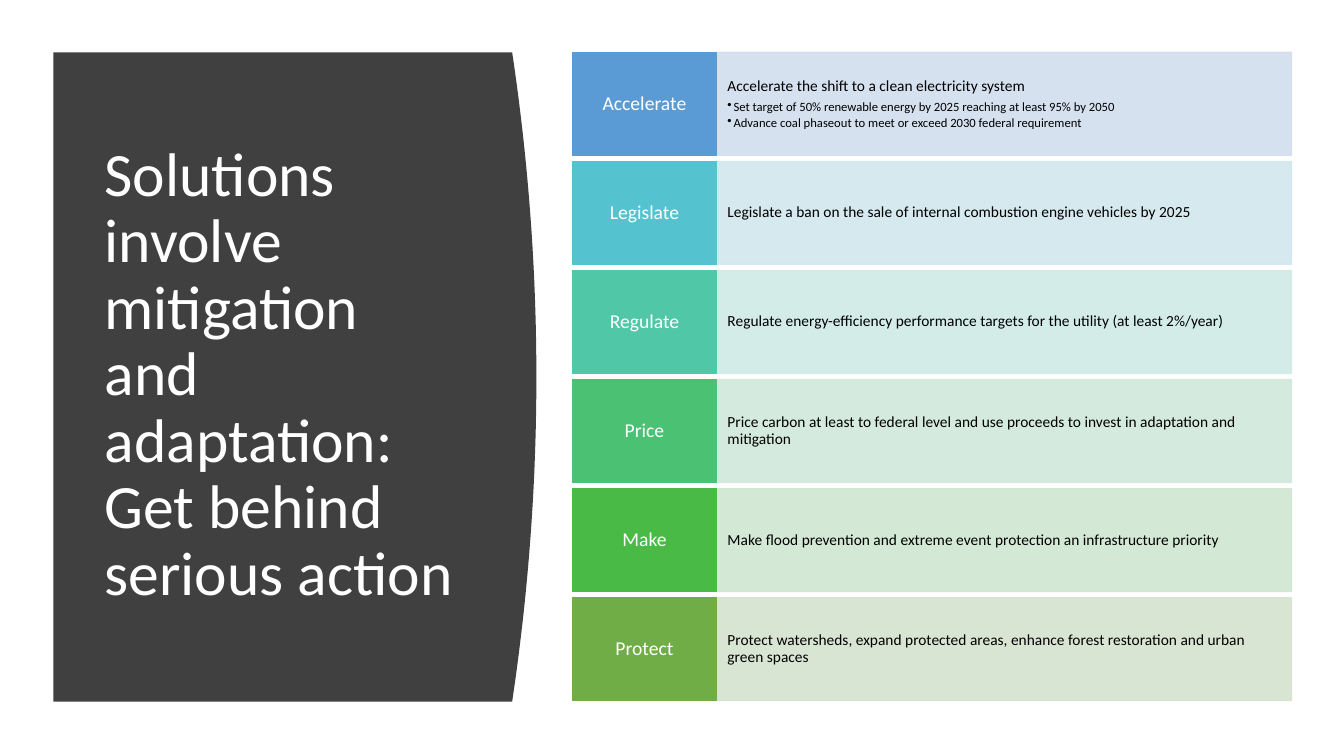
from lxml.etree import SubElement
from pptx import Presentation
from pptx.dml.color import RGBColor
from pptx.enum.shapes import MSO_SHAPE
from pptx.enum.text import MSO_ANCHOR, PP_ALIGN
from pptx.oxml.ns import qn
from pptx.util import Inches, Pt

WHITE = RGBColor(0xFF, 0xFF, 0xFF)
BLACK = RGBColor(0x00, 0x00, 0x00)
CHARCOAL = RGBColor(0x40, 0x40, 0x40)
BLUE, PALE_BLUE = RGBColor(0x5B, 0x9B, 0xD5), RGBColor(0xD2, 0xDE, 0xEF)
CYAN, PALE_CYAN = RGBColor(0x55, 0xC3, 0xCF), RGBColor(0xD1, 0xE7, 0xED)
TEAL, PALE_TEAL = RGBColor(0x50, 0xC8, 0xA7), RGBColor(0xD0, 0xEB, 0xE6)
MINT, PALE_MINT = RGBColor(0x4B, 0xC1, 0x74), RGBColor(0xD0, 0xE8, 0xDB)
GREEN, PALE_GREEN = RGBColor(0x4A, 0xBA, 0x46), RGBColor(0xCF, 0xE6, 0xD1)
OLIVE, PALE_OLIVE = RGBColor(0x70, 0xAD, 0x47), RGBColor(0xD5, 0xE3, 0xCF)

TITLE = "Solutions involve mitigation and adaptation: Get behind serious action"
ACTIONS = [
    ("Accelerate", BLUE, PALE_BLUE, "Accelerate the shift to a clean electricity system",
     ["Set target of 50% renewable energy by 2025 reaching at least 95% by 2050",
      "Advance coal phaseout to meet or exceed 2030 federal requirement"]),
    ("Legislate", CYAN, PALE_CYAN,
     "Legislate a ban on the sale of internal combustion engine vehicles by 2025", []),
    ("Regulate", TEAL, PALE_TEAL,
     "Regulate energy-efficiency performance targets for the utility (at least 2%/year)", []),
    ("Price", MINT, PALE_MINT,
     "Price carbon at least to federal level and use proceeds to invest in adaptation and mitigation", []),
    ("Make", GREEN, PALE_GREEN,
     "Make flood prevention and extreme event protection an infrastructure priority", []),
    ("Protect", OLIVE, PALE_OLIVE,
     "Protect watersheds, expand protected areas, enhance forest restoration and urban green spaces", []),
]


def set_frame(frame, anchor=MSO_ANCHOR.MIDDLE, side=0.1, end=0.05):
    """Set wrapping, anchor and margins of a text frame."""
    frame.word_wrap = True
    frame.vertical_anchor = anchor
    frame.margin_left = frame.margin_right = Inches(side)
    frame.margin_top = frame.margin_bottom = Inches(end)


def write(para, text, size=11, color=BLACK, align=PP_ALIGN.LEFT, after=0, bullet=False):
    """Write one formatted paragraph."""
    para.alignment = align
    para.line_spacing = 0.9
    para.space_after = Pt(after)
    if bullet:
        properties = para._p.get_or_add_pPr()
        properties.set("marL", str(Inches(0.06)))
        properties.set("indent", str(-Inches(0.06)))
        SubElement(properties, qn("a:buChar")).set("char", "•")
    span = para.add_run()
    span.text = text
    span.font.name = "Calibri"
    span.font.size = Pt(size)
    span.font.color.rgb = color


def add_panel(page, left, top, width, height, bulge=0.24, steps=40):
    """Draw the dark title panel with its curved right edge."""
    edge = []
    for step in range(steps + 1):
        offset = 2 * step / steps - 1
        edge.append((Inches(left + width - bulge * offset ** 2),
                     Inches(top + height * step / steps)))
    builder = page.shapes.build_freeform(Inches(left), Inches(top))
    builder.add_line_segments(edge + [(Inches(left), Inches(top + height))], close=True)
    panel = builder.convert_to_shape()
    panel.shadow.inherit = False
    panel.fill.solid()
    panel.fill.fore_color.rgb = CHARCOAL
    panel.line.fill.background()

    title = page.shapes.add_textbox(Inches(left + 0.41), Inches(top + 0.59),
                                    Inches(3.74), Inches(5.24))
    set_frame(title.text_frame)
    write(title.text_frame.paragraphs[0], TITLE, size=44, color=WHITE)


def add_block(page, left, top, width, height, color, opacity=100):
    """Draw one filled rectangle with a line of the same colour."""
    block = page.shapes.add_shape(MSO_SHAPE.RECTANGLE, Inches(left), Inches(top),
                                  Inches(width), Inches(height))
    block.shadow.inherit = False
    block.fill.solid()
    block.fill.fore_color.rgb = color
    block.line.color.rgb = color
    block.line.width = Pt(1)
    if opacity < 100:
        for shade in block._element.spPr.iter(qn("a:srgbClr")):
            SubElement(shade, qn("a:alpha")).set("val", str(opacity * 1000))
    return block


def add_action(page, left, top, width, height, action):
    """Draw one row: a verb block and its description bar."""
    verb, color, pale, description, details = action
    verb_width = width / 5

    bar = add_block(page, left + verb_width, top, width - verb_width, height, pale, opacity=90)
    anchor = MSO_ANCHOR.TOP if details else MSO_ANCHOR.MIDDLE
    set_frame(bar.text_frame, anchor=anchor, side=0.11, end=0.26)
    write(bar.text_frame.paragraphs[0], description, after=3.85)
    for detail in details:
        write(bar.text_frame.add_paragraph(), detail, size=9, after=1.35, bullet=True)

    label = add_block(page, left, top, verb_width, height, color)
    set_frame(label.text_frame, side=0.08, end=0.1)
    write(label.text_frame.paragraphs[0], verb, size=14, color=WHITE, align=PP_ALIGN.CENTER)


def add_actions(page, left, top, width, height, row_height=1.02):
    """Stack the action rows evenly in the given box."""
    pitch = (height - row_height) / (len(ACTIONS) - 1)
    for index, action in enumerate(ACTIONS):
        add_action(page, left, top + index * pitch, width, row_height, action)


def main():
    """Build and save the slide."""
    deck = Presentation()
    deck.slide_width, deck.slide_height = Inches(13.33), Inches(7.5)
    page = deck.slides.add_slide(deck.slide_layouts[6])
    add_panel(page, 0.53, 0.52, 4.79, 6.44)
    add_actions(page, 5.68, 0.52, 7.13, 6.43)
    deck.save("out.pptx")


if __name__ == "__main__":
    main()
